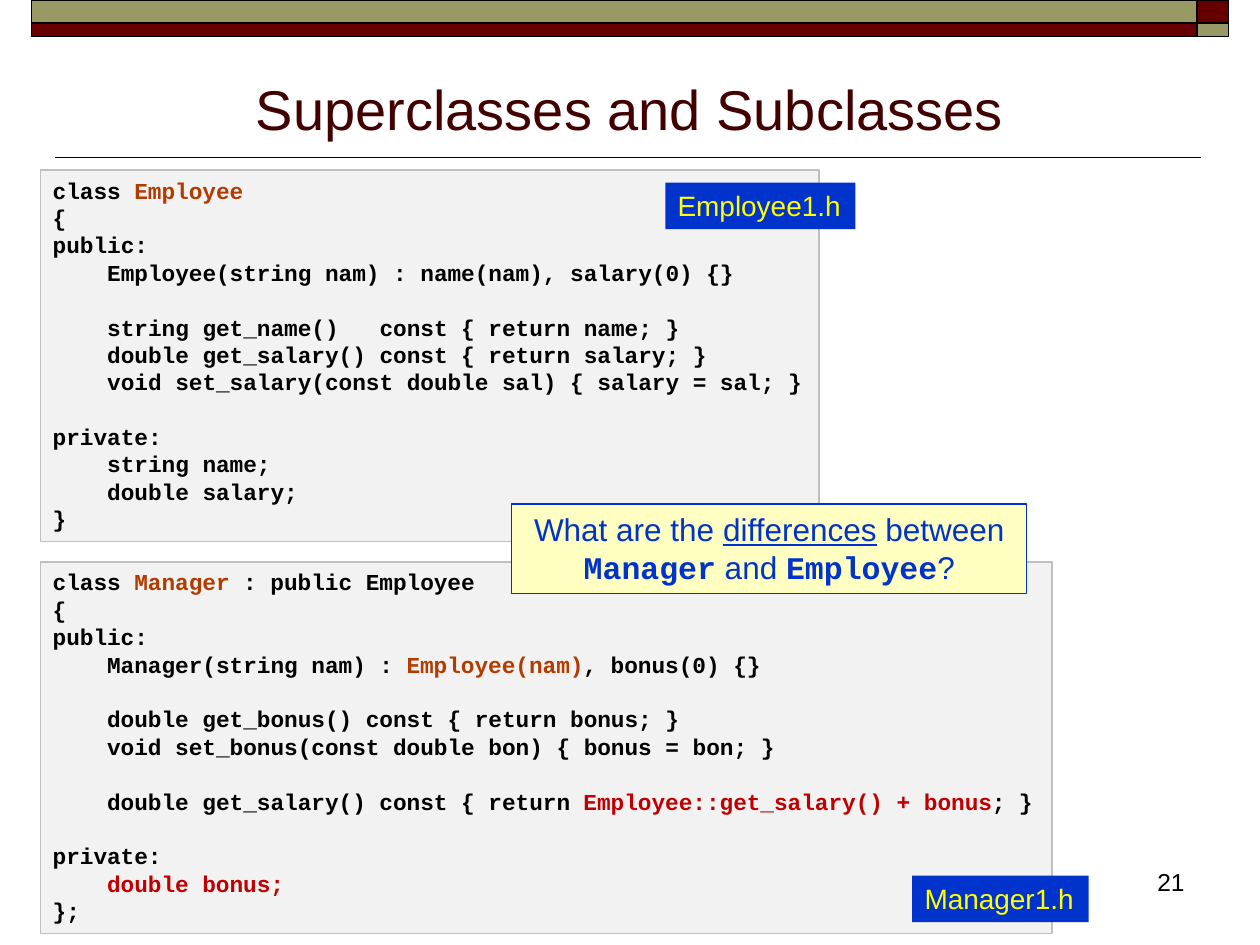
from typing import NamedTuple

from lxml.etree import SubElement
from pptx import Presentation
from pptx.dml.color import RGBColor
from pptx.enum.shapes import MSO_CONNECTOR, MSO_SHAPE
from pptx.enum.text import MSO_ANCHOR, PP_ALIGN
from pptx.oxml.ns import qn
from pptx.util import Inches, Pt

COLORS = {
    "black": "000000", "maroon": "660000", "olive": "999966", "title": "420000",
    "panel": "F2F2F2", "panel_edge": "BFBFBF", "name": "B23C00", "new": "C00000",
    "blue": "0033CC", "yellow": "FFFF00", "cream": "FFFFC2",
}
SANS, MONO = "Arial", "Courier New"
COLUMNS, ROWS = 100, 75  # square grid over the slide
CODE_PITCH = Pt(15.65)


class Area(NamedTuple):
    """Left, top, width and height in grid columns and rows."""
    left: float
    top: float
    width: float
    height: float


class Style(NamedTuple):
    size: float
    color: str
    font: str = SANS
    bold: bool = False
    align: PP_ALIGN = PP_ALIGN.LEFT
    pitch: int | None = None


class Run(NamedTuple):
    text: str
    color: str | None = None
    font: str | None = None
    bold: bool | None = None
    underline: bool | None = None


class Box(NamedTuple):
    """Filled rectangle; an empty line becomes space before the next line."""
    area: Area
    fill: str
    edge: str | None = None
    edge_width: float = 0.75
    style: Style | None = None
    lines: tuple = ()


CODE = Style(13, "black", MONO, True, pitch=CODE_PITCH)
QUESTION = Style(18, "blue", align=PP_ALIGN.CENTER)
FILE_LABEL = Style(16, "yellow")

EMPLOYEE_CODE = (
    ("class ", Run("Employee", "name")),
    ("{",),
    ("public:",),
    ("    Employee(string nam) : name(nam), salary(0) {}",),
    (),
    ("    string get_name()   const { return name; }",),
    ("    double get_salary() const { return salary; }",),
    ("    void set_salary(const double sal) { salary = sal; }",),
    (),
    ("private:",),
    ("    string name;",),
    ("    double salary;",),
    ("}",),
)
MANAGER_CODE = (
    ("class ", Run("Manager", "name"), " : public Employee"),
    ("{",),
    ("public:",),
    ("    Manager(string nam) : ", Run("Employee(nam)", "name"), ", bonus(0) {}"),
    (),
    ("    double get_bonus() const { return bonus; }",),
    ("    void set_bonus(const double bon) { bonus = bon; }",),
    (),
    ("    double get_salary() const { return ",
     Run("Employee::get_salary() + bonus", "new"), "; }"),
    (),
    ("private:",),
    ("    ", Run("double bonus;", "new")),
    ("};",),
)
QUESTION_LINES = (
    ("What are the ", Run("differences", underline=True), " between"),
    (Run("Manager", font=MONO, bold=True), " and ",
     Run("Employee", font=MONO, bold=True), "?"),
)

BANNER = (
    Box(Area(95, 0, 2.5, 1.8), "maroon", "black", 1),
    Box(Area(2.5, 0, 92.5, 1.8), "olive", "black", 1),
    Box(Area(2.5, 1.8, 92.5, 1.1), "maroon", "black", 1),
    Box(Area(95, 1.8, 2.5, 1.1), "olive", "black", 1),
)
CONTENT = (
    Box(Area(3.2, 13.5, 61.8, 29.5), "panel", "panel_edge", style=CODE, lines=EMPLOYEE_CODE),
    Box(Area(3.2, 44.6, 80.3, 29.5), "panel", "panel_edge", style=CODE, lines=MANAGER_CODE),
    Box(Area(40.6, 40, 40.9, 7.1), "cream", "blue", style=QUESTION, lines=QUESTION_LINES),
    Box(Area(52.8, 14.5, 15.1, 3.7), "blue", style=FILE_LABEL, lines=(("Employee1.h",),)),
    Box(Area(72.4, 69.5, 14, 3.7), "blue", style=FILE_LABEL, lines=(("Manager1.h",),)),
)

presentation = Presentation()
presentation.slide_width, presentation.slide_height = Inches(10), Inches(7.5)


def column(count: float) -> int:
    return round(presentation.slide_width * count / COLUMNS)


def row(count: float) -> int:
    return round(presentation.slide_height * count / ROWS)


def place(area: Area) -> tuple[int, int, int, int]:
    return column(area.left), row(area.top), column(area.width), row(area.height)


def rgb(name: str) -> RGBColor:
    return RGBColor.from_string(COLORS[name])


def write(frame, lines: tuple, style: Style) -> None:
    paragraph, gap = frame.paragraphs[0], False
    for index, line in enumerate(lines):
        if not line:
            gap = True
            continue
        if index:
            paragraph = frame.add_paragraph()
        paragraph.alignment = style.align
        if style.pitch:
            paragraph.line_spacing = style.pitch
        if gap:
            paragraph.space_before = style.pitch
        gap = False
        font = paragraph.font
        font.size, font.name, font.bold = Pt(style.size), style.font, style.bold
        font.color.rgb = rgb(style.color)
        for part in line:
            piece = part if isinstance(part, Run) else Run(part)
            run = paragraph.add_run()
            run.text = piece.text
            run.font.name = piece.font or style.font
            run.font.bold = style.bold if piece.bold is None else piece.bold
            run.font.size = Pt(style.size)
            run.font.underline = piece.underline
            run.font.color.rgb = rgb(piece.color or style.color)


def draw_box(slide, box: Box) -> None:
    shape = slide.shapes.add_shape(MSO_SHAPE.RECTANGLE, *place(box.area))
    shape.shadow.inherit = False
    shape.fill.solid()
    shape.fill.fore_color.rgb = rgb(box.fill)
    if box.edge:
        shape.line.color.rgb = rgb(box.edge)
        shape.line.width = Pt(box.edge_width)
    else:
        shape.line.fill.background()
    if box.style:
        shape.text_frame.word_wrap = False
        shape.text_frame.vertical_anchor = MSO_ANCHOR.TOP
        write(shape.text_frame, box.lines, box.style)


def draw_text(slide, area: Area, text: str, style: Style, anchor: MSO_ANCHOR) -> None:
    frame = slide.shapes.add_textbox(*place(area)).text_frame
    frame.word_wrap = True
    frame.vertical_anchor = anchor
    write(frame, ((text,),), style)


def draw_rule(slide, left: float, right: float, top: float) -> None:
    rule = slide.shapes.add_connector(
        MSO_CONNECTOR.STRAIGHT, column(left), row(top), column(right), row(top))
    rule.line.color.rgb = rgb("black")
    rule.line.width = Pt(1)
    SubElement(rule._element.spPr, qn("a:effectLst"))


def main() -> None:
    slide = presentation.slides.add_slide(presentation.slide_layouts[6])
    draw_rule(slide, 4.4, 95.3, 12.5)
    for box in BANNER:
        draw_box(slide, box)
    draw_text(slide, Area(89, 68.3, 6, 5), "21",
              Style(14, "black", align=PP_ALIGN.RIGHT), MSO_ANCHOR.TOP)
    draw_text(slide, Area(5, 4.5, 90, 7.2), "Superclasses and Subclasses",
              Style(32, "title", align=PP_ALIGN.CENTER), MSO_ANCHOR.BOTTOM)
    for box in CONTENT:
        draw_box(slide, box)
    presentation.save("out.pptx")


if __name__ == "__main__":
    main()
